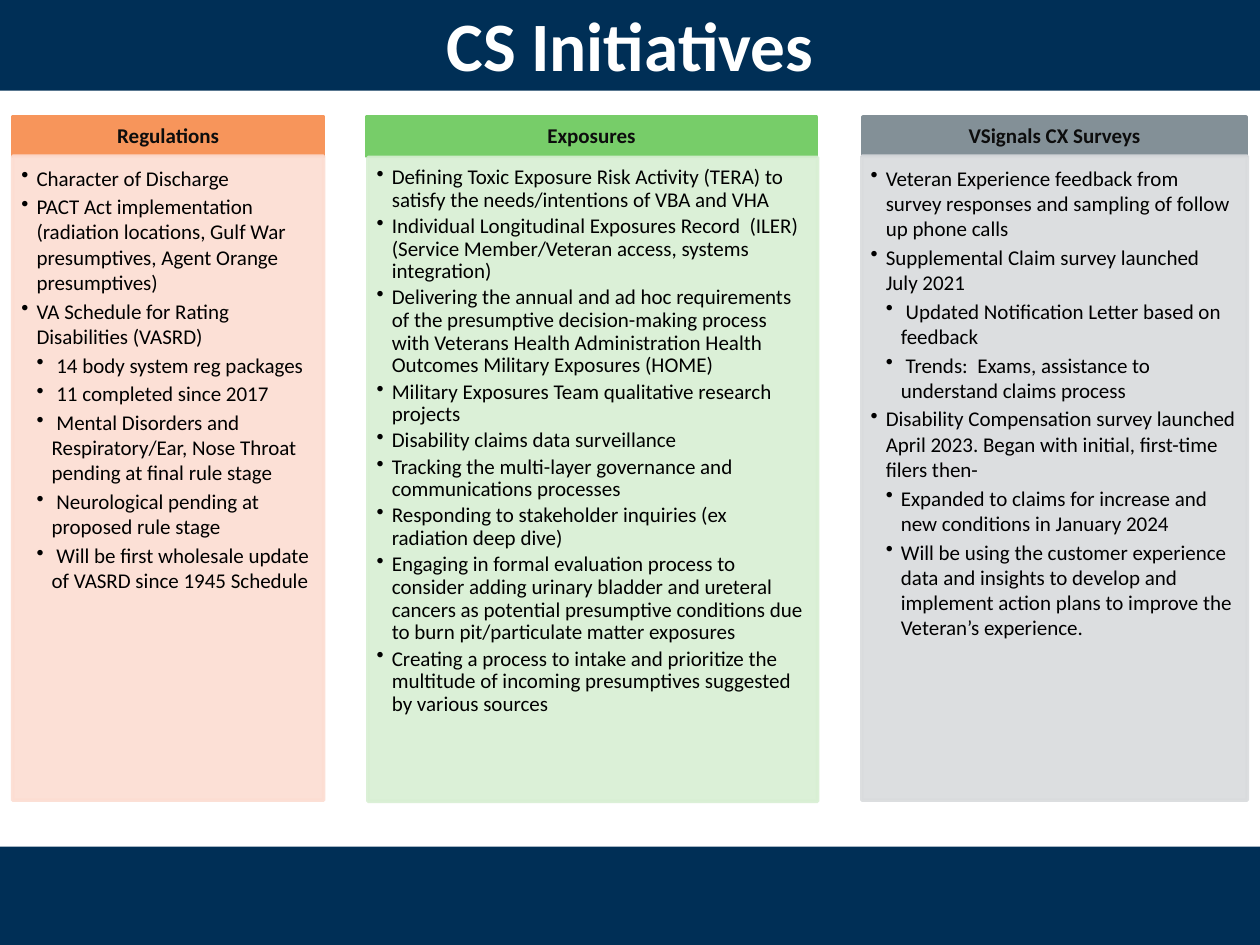
from pptx import Presentation
from pptx.dml.color import RGBColor
from pptx.enum.shapes import MSO_SHAPE
from pptx.enum.text import MSO_ANCHOR, PP_ALIGN
from pptx.oxml.ns import qn
from pptx.util import Inches, Pt
from lxml import etree

RECTANGLE = MSO_SHAPE.RECTANGLE
TOP, MIDDLE = MSO_ANCHOR.TOP, MSO_ANCHOR.MIDDLE
LEFT, CENTER = PP_ALIGN.LEFT, PP_ALIGN.CENTER

NAVY = RGBColor(0x00, 0x2F, 0x56)
WHITE = RGBColor(0xFF, 0xFF, 0xFF)
BLACK = RGBColor(0x00, 0x00, 0x00)
CHARCOAL = RGBColor(0x0D, 0x0D, 0x0D)
ORANGE = RGBColor(0xF7, 0x95, 0x5B)
PEACH = RGBColor(0xFC, 0xDD, 0xD2)
GREEN = RGBColor(0x77, 0xCD, 0x69)
MINT = RGBColor(0xD8, 0xEF, 0xD3)
SLATE = RGBColor(0x83, 0x90, 0x97)
SILVER = RGBColor(0xD9, 0xDB, 0xDD)

HEADER_TOP, HEADER_HEIGHT, PANEL_HEIGHT = 0.93, 0.31, 5.11
INDENT = 0.12

REGULATIONS = [
    (1, "Character of Discharge"),
    (1, "PACT Act implementation (radiation locations, Gulf War presumptives, Agent Orange presumptives)"),
    (1, "VA Schedule for Rating Disabilities (VASRD)"),
    (2, " 14 body system reg packages"),
    (2, " 11 completed since 2017"),
    (2, " Mental Disorders and Respiratory/Ear, Nose Throat pending at final rule stage"),
    (2, " Neurological pending at proposed rule stage"),
    (2, " Will be first wholesale update of VASRD since 1945 Schedule"),
]
EXPOSURES = [
    (1, "Defining Toxic Exposure Risk Activity (TERA) to satisfy the needs/intentions of VBA and VHA"),
    (1, "Individual Longitudinal Exposures Record  (ILER) (Service Member/Veteran access, systems integration)"),
    (1, "Delivering the annual and ad hoc requirements of the presumptive decision-making process "
        "with Veterans Health Administration Health Outcomes Military Exposures (HOME)"),
    (1, "Military Exposures Team qualitative research projects"),
    (1, "Disability claims data surveillance"),
    (1, "Tracking the multi-layer governance and communications processes"),
    (1, "Responding to stakeholder inquiries (ex radiation deep dive)"),
    (1, "Engaging in formal evaluation process to consider adding urinary bladder and ureteral cancers "
        "as potential presumptive conditions due to burn pit/particulate matter exposures"),
    (1, "Creating a process to intake and prioritize the multitude of incoming presumptives "
        "suggested by various sources"),
]
SURVEYS = [
    (1, "Veteran Experience feedback from survey responses and sampling of follow up phone calls"),
    (1, "Supplemental Claim survey launched July 2021"),
    (2, " Updated Notification Letter based on feedback"),
    (2, " Trends:  Exams, assistance to understand claims process"),
    (1, "Disability Compensation survey launched April 2023. Began with initial, first-time filers then-"),
    (2, "Expanded to claims for increase and new conditions in January 2024"),
    (2, "Will be using the customer experience data and insights to develop and implement action plans "
        "to improve the Veteran’s experience."),
]


class SlideBuilder:
    font_name = "Calibri"
    body_size = 12

    def __init__(self, slide):
        self.slide = slide

    def rectangle(self, left, top, width, height, color, outlined=False, opacity=100):
        shape = self.slide.shapes.add_shape(
            RECTANGLE, Inches(left), Inches(top), Inches(width), Inches(height))
        shape.shadow.inherit = False
        shape.fill.solid()
        shape.fill.fore_color.rgb = color
        if outlined:
            shape.line.color.rgb = color
            shape.line.width = Pt(2)
        else:
            shape.line.fill.background()
        if opacity < 100:
            for rgb in shape._element.spPr.iter(qn("a:srgbClr")):
                etree.SubElement(rgb, qn("a:alpha"), val=str(opacity * 1000))
        return shape

    def frame(self, shape, anchor, left, top, right, bottom):
        frame = shape.text_frame
        frame.word_wrap = True
        frame.vertical_anchor = anchor
        frame.margin_left, frame.margin_top = Inches(left), Inches(top)
        frame.margin_right, frame.margin_bottom = Inches(right), Inches(bottom)
        return frame

    def set_text(self, paragraph, text, size, color, alignment=LEFT, bold=False):
        paragraph.text = text
        paragraph.alignment = alignment
        paragraph.font.name = self.font_name
        paragraph.font.size = Pt(size)
        paragraph.font.bold = bold
        paragraph.font.color.rgb = color

    def title(self, text):
        box = self.slide.shapes.add_textbox(Inches(0), Inches(0), Inches(10), Inches(0.7))
        frame = self.frame(box, MIDDLE, 0.1, 0.05, 0.1, 0.05)
        self.set_text(frame.paragraphs[0], text, 39.6, WHITE, CENTER, True)

    def header(self, left, width, text, color):
        shape = self.rectangle(left, HEADER_TOP, width, HEADER_HEIGHT, color, outlined=True)
        paragraph = self.frame(shape, MIDDLE, 0.09, 0.05, 0.09, 0.05).paragraphs[0]
        paragraph.line_spacing = 0.9
        self.set_text(paragraph, text, self.body_size, CHARCOAL, CENTER, True)

    def panel(self, left, top, width, items, color, line_spacing):
        shape = self.rectangle(left, top, width, PANEL_HEIGHT, color, outlined=True, opacity=90)
        frame = self.frame(shape, TOP, 0.07, 0.07, 0.09, 0.1)
        for index, (level, text) in enumerate(items):
            paragraph = frame.add_paragraph() if index else frame.paragraphs[0]
            paragraph.level = level
            paragraph.line_spacing = line_spacing
            paragraph.space_after = Pt(2)
            self.bullet(paragraph, level)
            self.set_text(paragraph, text, self.body_size, BLACK)

    def bullet(self, paragraph, level):
        properties = paragraph._p.get_or_add_pPr()
        properties.set("marL", str(Inches(INDENT * level)))
        properties.set("indent", str(-Inches(INDENT)))
        etree.SubElement(properties, qn("a:buChar"), char="•")


def main():
    presentation = Presentation()
    presentation.slide_width, presentation.slide_height = Inches(10), Inches(7.5)
    builder = SlideBuilder(presentation.slides.add_slide(presentation.slide_layouts[6]))

    builder.rectangle(0, 6.72, 10, 0.78, NAVY)
    builder.rectangle(0, 0, 10, 0.72, NAVY)
    builder.title("CS Initiatives")

    columns = [
        ("Regulations", ORANGE, (0.1, 2.47), PEACH, (0.1, 1.24, 2.47), REGULATIONS, 1.0),
        ("Exposures", GREEN, (2.91, 3.57), MINT, (2.92, 1.25, 3.57), EXPOSURES, 0.9),
        ("VSignals CX Surveys", SLATE, (6.85, 3.04), SILVER, (6.84, 1.24, 3.06), SURVEYS, 1.0),
    ]
    for heading, header_color, header_span, panel_color, panel_place, items, spacing in columns:
        builder.header(*header_span, heading, header_color)
        builder.panel(*panel_place, items, panel_color, spacing)

    presentation.save("out.pptx")


if __name__ == "__main__":
    main()
